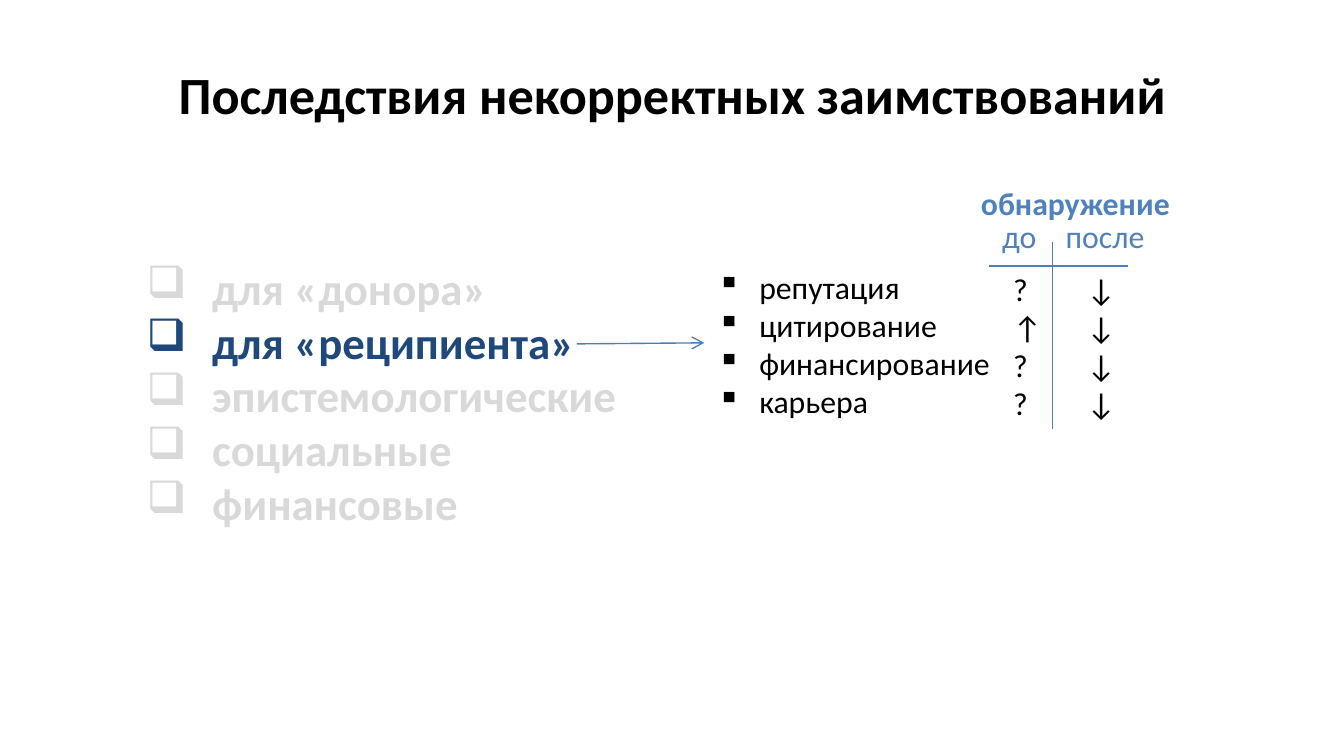
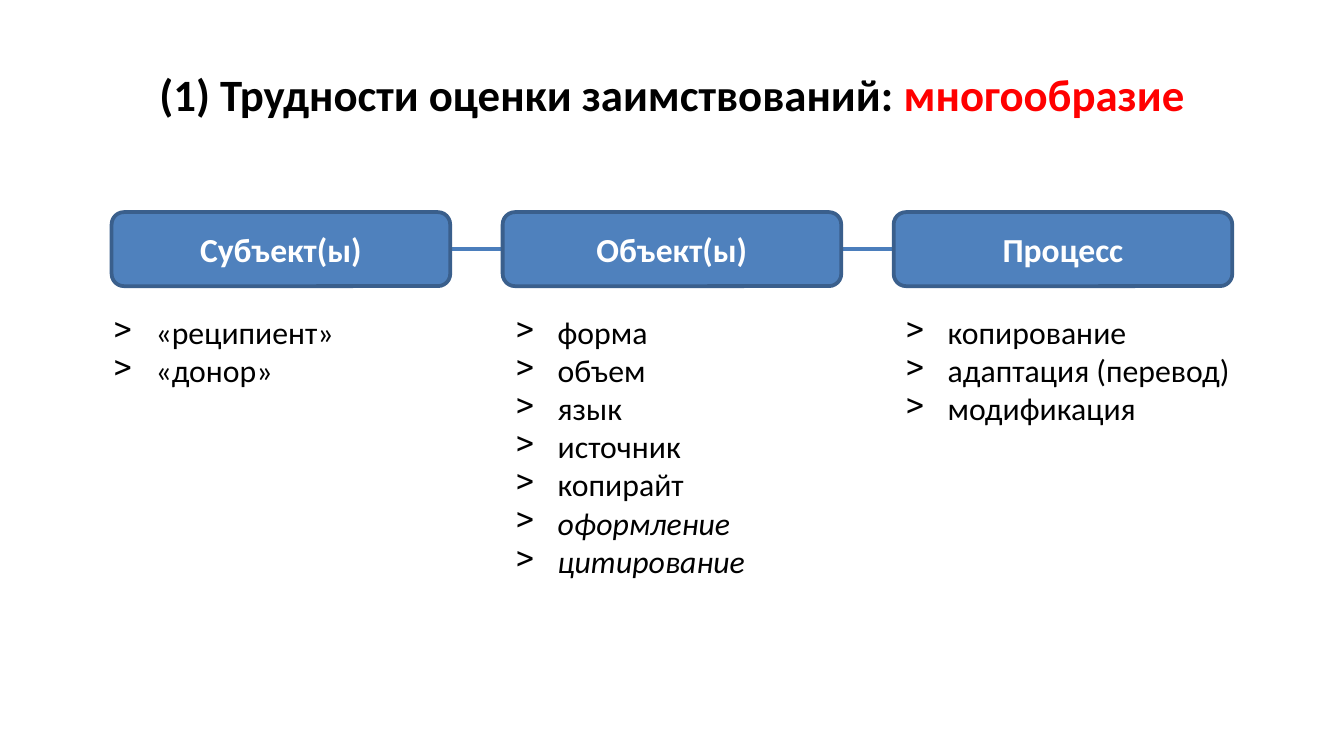
import pptx
import pptx.dml.color
import pptx.enum.shapes
import pptx.enum.text
import pptx.oxml
import pptx.oxml.ns
import pptx.util

Cm = pptx.util.Cm
RGBColor = pptx.dml.color.RGBColor
BLACK = RGBColor(0x00, 0x00, 0x00)
WHITE = RGBColor(0xFF, 0xFF, 0xFF)
RED = RGBColor(0xFF, 0x00, 0x00)
BLUE = RGBColor(0x4F, 0x81, 0xBD)
LINE_BLUE = RGBColor(0x4B, 0x7E, 0xBC)
BORDER_BLUE = RGBColor(0x3A, 0x5F, 0x8C)
NAVY = RGBColor(0x1F, 0x49, 0x7D)
MUTED = RGBColor(0xD9, 0xD9, 0xD9)

FONT = "Calibri"
CENTER = pptx.enum.text.PP_ALIGN.CENTER
MIDDLE = pptx.enum.text.MSO_ANCHOR.MIDDLE

BODY = {"size": 17, "color": BLACK}
LABEL = {"size": 17, "color": BLUE}
HEADING = {"size": 18, "color": WHITE, "bold": True}
TOPIC = {"size": 24, "color": MUTED, "bold": True}


class Deck:
    def __init__(self):
        self.presentation = pptx.Presentation()
        self.presentation.slide_width = Cm(25.4)
        self.presentation.slide_height = Cm(14.29)
        self.slide = None

    def add_slide(self):
        self.slide = self.presentation.slides.add_slide(self.presentation.slide_layouts[6])

    def add_runs(self, paragraph, runs):
        """Add (text, format) runs to a paragraph."""
        for text, style in runs:
            run = paragraph.add_run()
            run.text = text
            values = {"name": FONT, **style}
            run.font.color.rgb = values.pop("color")
            values["size"] = pptx.util.Pt(values["size"])
            for name, value in values.items():
                setattr(run.font, name, value)

    def text(self, left, top, width, height, lines, anchor=None, alignment=None,
             bullet=None, margin=0, hanging=0):
        """Add a text box; each line is a list of (text, format) runs."""
        box = self.slide.shapes.add_textbox(Cm(left), Cm(top), Cm(width), Cm(height))
        frame = box.text_frame
        frame.word_wrap = True
        frame.vertical_anchor = anchor
        for number, runs in enumerate(lines):
            paragraph = frame.add_paragraph() if number else frame.paragraphs[0]
            paragraph.alignment = alignment
            if bullet:
                self.bullet(paragraph, bullet, margin, hanging)
            self.add_runs(paragraph, runs)

    def bullet(self, paragraph, character, margin, hanging):
        properties = paragraph._p.get_or_add_pPr()
        properties.set("marL", str(Cm(margin)))
        properties.set("indent", str(-Cm(hanging)))
        mark = pptx.oxml.parse_xml(f'<a:buChar {pptx.oxml.ns.nsdecls("a")}/>')
        mark.set("char", character)
        properties.append(mark)

    def title(self, *runs):
        self.text(1.27, 0.58, 22.86, 2.39, [runs], MIDDLE, CENTER)

    def items(self, left, top, width, height, lines, bullet):
        self.text(left, top, width, height, lines, bullet=bullet, margin=0.79, hanging=0.79)

    def line(self, start, end, weight=0.75, arrow=False):
        connector = self.slide.shapes.add_connector(
            pptx.enum.shapes.MSO_CONNECTOR.STRAIGHT, *map(Cm, start + end))
        connector.line.color.rgb = LINE_BLUE
        connector.line.width = pptx.util.Pt(weight)
        namespace = pptx.oxml.ns.nsdecls("a")
        if arrow:
            connector.line._get_or_add_ln().append(
                pptx.oxml.parse_xml(f'<a:tailEnd {namespace} type="arrow"/>'))
        connector._element.spPr.append(pptx.oxml.parse_xml(f"<a:effectLst {namespace}/>"))

    def box(self, left, top, width, height, text):
        shape = self.slide.shapes.add_shape(
            pptx.enum.shapes.MSO_SHAPE.ROUNDED_RECTANGLE,
            Cm(left), Cm(top), Cm(width), Cm(height))
        shape.shadow.inherit = False
        shape.fill.solid()
        shape.fill.fore_color.rgb = BLUE
        shape.line.color.rgb = BORDER_BLUE
        shape.line.width = pptx.util.Pt(2)
        shape.text_frame.vertical_anchor = MIDDLE
        paragraph = shape.text_frame.paragraphs[0]
        paragraph.alignment = CENTER
        self.add_runs(paragraph, [(text, HEADING)])


def plain(texts, style=BODY):
    """Make one single-run line of each text."""
    return [[(text, style)] for text in texts]


def consequences_slide(deck):
    deck.add_slide()
    deck.title(("Последствия некорректных заимствований",
                {"size": 28, "color": BLACK, "bold": True}))

    topics = ["для «донора»", "для «реципиента»", "эпистемологические",
              "социальные", "финансовые"]
    lines = plain(topics, TOPIC)
    lines[1] = [(topics[1], {**TOPIC, "color": NAVY})]
    deck.text(1.5, 4.8, 22.6, 5.38, lines, bullet="❑", margin=2.26, hanging=1.24)
    deck.line((10.9, 6.5), (13.31, 6.48), arrow=True)

    effects = ["репутация", "цитирование", "финансирование", "карьера"]
    deck.items(13.31, 4.93, 5.99, 3.18, plain(effects), "▪")

    deck.line((19.89, 4.57), (19.89, 8.1))
    deck.line((18.69, 5.03), (21.31, 5.03))
    deck.text(18.29, 3.35, 5, 0.99, plain(["обнаружение"], {**LABEL, "bold": True}))
    deck.text(18.69, 3.98, 1.2, 0.99, plain(["до"], LABEL))
    deck.text(19.89, 3.98, 2.05, 0.99, plain(["после"], LABEL))
    for left, marks in ((18.9, "?↑??"), (20.29, "↓↓↓↓")):
        deck.text(left, 4.97, 1.2, 3.18, plain(marks))


def difficulties_slide(deck):
    deck.add_slide()
    heading = {"size": 24, "color": BLACK, "bold": True}
    deck.line((8.1, 4.7), (17.91, 4.7), weight=2)
    deck.title(("(1) Трудности оценки заимствований: ", heading),
               ("многообразие", {**heading, "color": RED}))

    italic = {**BODY, "italic": True}
    columns = [
        ("Субъект(ы)", 1.9, plain(["«реципиент»", "«донор»"])),
        ("Объект(ы)", 9.5, plain(["форма", "объем", "язык", "источник", "копирайт"])
         + plain(["оформление", "цитирование"], italic)),
        ("Процесс", 16.87, plain(["копирование", "адаптация (перевод)", "модификация"])),
    ]
    for number, (name, list_left, lines) in enumerate(columns):
        deck.box(2.11 + 7.39 * number, 4.01, 6.4, 1.4, name)
        deck.items(list_left, 5.79, 7.2, 0.25 + 0.73 * len(lines), lines, ">")


def main():
    deck = Deck()
    consequences_slide(deck)
    difficulties_slide(deck)
    deck.presentation.save("out.pptx")


if __name__ == "__main__":
    main()
